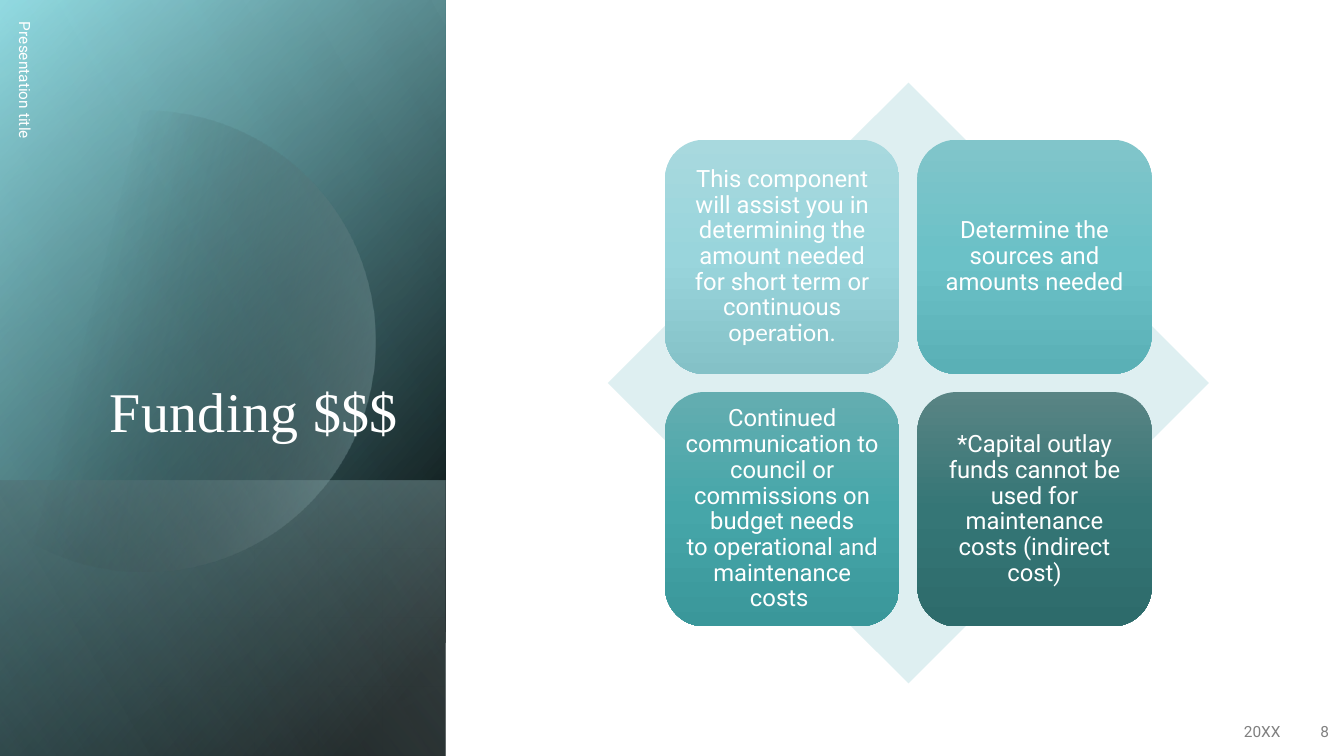
from itertools import chain

from pptx import Presentation
from pptx.dml.color import RGBColor
from pptx.enum.shapes import MSO_SHAPE as Preset
from pptx.enum.text import MSO_ANCHOR as Anchor, PP_ALIGN as Align
from pptx.oxml import parse_xml
from pptx.oxml.ns import nsdecls
from pptx.util import Inches, Pt

WIDTH, HEIGHT = 13.33, 7.5
COLORS = {"white": "FFFFFF", "black": "000000", "cyan": "6AD4DE", "mist": "C4EEF2",
          "veil": "DCF5F7", "diamond": "DEEFF1", "footer": "808080"}
BODY, ACCENT, HEADING = "Roboto", "Lato", "Times New Roman"
HARD_SPACE = chr(160)

# Card text as (words, font) runs, with the three stops of each card's gradient
CARDS = [
    ([("This component will assist you in determining the amount needed "
       f"for short{HARD_SPACE}term or continuous", BODY), (" operation", ACCENT), (".", BODY)],
     ("A8D9DE", "99D5DC", "84C1C7")),
    ([("Determine the sources and amounts needed", BODY)],
     ("81C5CA", "6BC1C7", "5AB0B6")),
    ([("Continued communication to council or commissions on budget needs "
       f"to{HARD_SPACE}operational", BODY), (" and", ACCENT),
      (f" maintenance costs{HARD_SPACE}", BODY)],
     ("64ADB0", "46A6A9", "3A979A")),
    ([("*Capital outlay funds cannot be used for maintenance costs "
       "(indirect cost)", BODY)],
     ("598484", "357676", "2D6B6B")),
]

# Disc outline: one point is a straight line, three points are a curve
DISC_START = (1.49, 1.1)
DISC_SEGMENTS = [
    [(2.46, 1.12), (3.35, 1.77), (3.63, 2.75)],
    [(3.98, 3.97), (3.28, 5.23), (2.07, 5.58)],
    [(1.31, 5.8), (0.53, 5.61), (-0.03, 5.14)],
    [(-0.15, 5.03)],
    [(-0.15, 1.75)],
    [(0, 1.61)],
    [(0.23, 1.42), (0.5, 1.28), (0.8, 1.19)],
    [(1.03, 1.13), (1.26, 1.1), DISC_START],
]


def paint_solid(shape, color):
    shape.fill.solid()
    shape.fill.fore_color.rgb = RGBColor.from_string(COLORS[color])


def paint_gradient(shape, stops, angle):
    """Fill with (position, colour, opacity) stops, all in percent."""
    shape.fill.background()
    stop_xml = "".join(
        f'<a:gs pos="{position * 1000}"><a:srgbClr val="{color}">'
        f'<a:alpha val="{opacity * 1000}"/></a:srgbClr></a:gs>'
        for position, color, opacity in stops)
    gradient = parse_xml(
        f'<a:gradFill {nsdecls("a")} rotWithShape="1"><a:gsLst>{stop_xml}</a:gsLst>'
        f'<a:lin ang="{angle * 60000}" scaled="0"/></a:gradFill>')
    properties = shape._element.spPr
    properties.replace(properties.find("{*}noFill"), gradient)


def make_plain(shape):
    shape.shadow.inherit = False
    shape.line.fill.background()
    return shape


def add_plain_shape(slide, preset, left, top, width, height):
    box = [Inches(value) for value in (left, top, width, height)]
    return make_plain(slide.shapes.add_shape(preset, *box))


def write_text(shape, runs, size, color, align, anchor=Anchor.MIDDLE, spacing=1.0, **margins):
    frame = shape.text_frame
    settings = {"word_wrap": True, "vertical_anchor": anchor}
    settings.update({name: Inches(value) for name, value in margins.items()})
    for name, value in settings.items():
        setattr(frame, name, value)
    paragraph = frame.paragraphs[0]
    paragraph.alignment, paragraph.line_spacing = align, spacing
    for words, font_name in runs:
        run = paragraph.add_run()
        run.text = words
        for name, value in {"name": font_name, "size": Pt(size)}.items():
            setattr(run.font, name, value)
        run.font.color.rgb = RGBColor.from_string(COLORS[color])
    return paragraph


def add_label(slide, box, words, size, color, align, font=BODY, rotation=0, **options):
    label = slide.shapes.add_textbox(*[Inches(value) for value in box])
    label.rotation = rotation
    return write_text(label, [(words, font)], size, color, align, **options)


def add_turned_layer(slide, left, top, width, height, stops, angle):
    """A rectangle turned a quarter and mirrored, so that it covers the given box."""
    layer = add_plain_shape(slide, Preset.RECTANGLE, left + (width - height) / 2,
                            top + (height - width) / 2, height, width)
    layer.rotation = 90
    layer._element.spPr.find("{*}xfrm").set("flipH", "1")
    paint_gradient(layer, stops, angle)


def add_disc(slide, left, top, stops, angle):
    """A disc cut off straight at its left edge."""
    def place(point):
        return Inches(left + point[0]), Inches(top + point[1])

    builder = slide.shapes.build_freeform(*place(DISC_START))
    builder.add_line_segments([place(point) for point in chain(*DISC_SEGMENTS)], close=True)
    disc = make_plain(builder.convert_to_shape())

    # Gather each three straight steps of a curve into one Bezier step
    lines = iter(list(disc._element.iter("{*}lnTo")))
    for segment in DISC_SEGMENTS:
        steps = [next(lines) for _ in segment]
        if len(steps) == 3:
            curve = parse_xml(f'<a:cubicBezTo {nsdecls("a")}/>')
            steps[0].addprevious(curve)
            for step in steps:
                curve.append(step[0])
                step.getparent().remove(step)
    paint_gradient(disc, stops, angle)


def draw_title_panel(slide, left, top, width, height):
    black, mist = COLORS["black"], COLORS["mist"]
    panel = (left, top, width, height)
    floor_height = height * 0.365

    # Layered gradients
    add_turned_layer(slide, *panel, [(8, black, 100), (100, COLORS["cyan"], 100)], 50)
    add_turned_layer(slide, *panel, [(0, black, 0), (99, mist, 46)], 30)
    add_turned_layer(slide, left, top + height - floor_height, width, floor_height,
                     [(2, mist, 29), (100, black, 30)], 130)
    add_disc(slide, left, top, [(29, black, 0), (100, mist, 43)], 14)
    add_turned_layer(slide, *panel, [(0, black, 0), (99, COLORS["veil"], 11)], 120)

    # Title and upright header
    title = add_label(slide, (left + 0.64, top + 1.84, 3.41, 2.62), "Funding $$$", 40, "white",
                      Align.RIGHT, font=HEADING, anchor=Anchor.BOTTOM, spacing=0.9)
    title.runs[0].font._element.set("spc", "30")
    add_label(slide, (left - 2, top + 2.17, 4.5, 0.4), "Presentation title", 11, "white",
              Align.LEFT, rotation=90)


def draw_matrix(slide, left, top, side):
    paint_solid(add_plain_shape(slide, Preset.DIAMOND, left, top, side, side), "diamond")

    # Two by two cards, as shares of the diamond's side
    offset, step, card_side = side * 0.095, side * 0.42, side * 0.39
    margins = {f"margin_{edge}": 0.07 for edge in ("left", "top", "right", "bottom")}
    for index, (runs, colors) in enumerate(CARDS):
        row, column = divmod(index, 2)
        card = add_plain_shape(slide, Preset.ROUNDED_RECTANGLE, left + offset + column * step,
                               top + offset + row * step, card_side, card_side)
        paint_gradient(card, [(50 * place, color, 100) for place, color in enumerate(colors)], 90)
        write_text(card, runs, 17, "white", Align.CENTER, spacing=0.9, **margins)


def draw_footer(slide, left, top, height):
    date_width, number_width = 3, 0.48
    add_label(slide, (left, top, date_width, height), "20XX", 11, "footer", Align.RIGHT)
    add_label(slide, (left + date_width, top, number_width, height), "8", 11, "footer",
              Align.RIGHT)


def main():
    presentation = Presentation()
    presentation.slide_width, presentation.slide_height = Inches(WIDTH), Inches(HEIGHT)
    slide = presentation.slides.add_slide(presentation.slide_layouts[6])
    paint_solid(add_plain_shape(slide, Preset.RECTANGLE, 0, 0, WIDTH, HEIGHT), "white")
    draw_title_panel(slide, 0, 0, 4.42, HEIGHT)
    draw_matrix(slide, 6.03, 0.82, 5.96)
    draw_footer(slide, 9.8, 7.06, 0.4)
    presentation.save("out.pptx")


if __name__ == "__main__":
    main()
